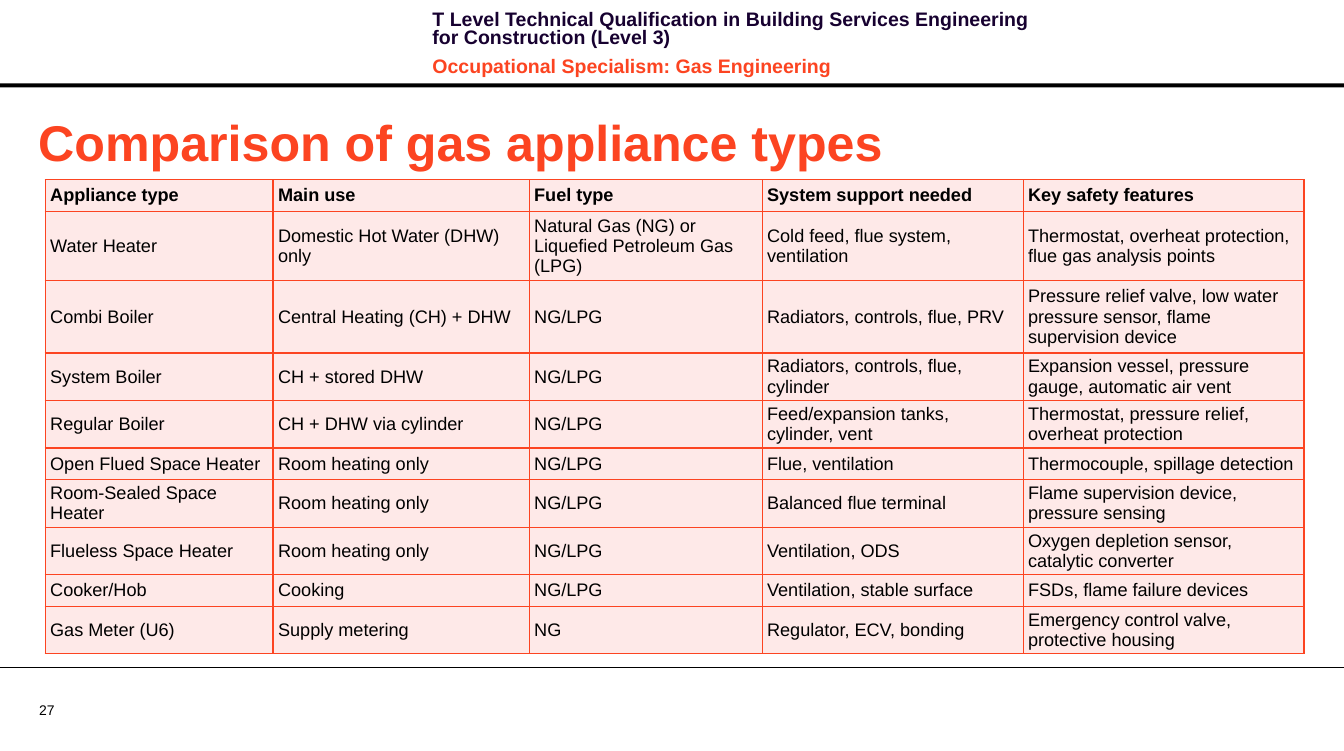
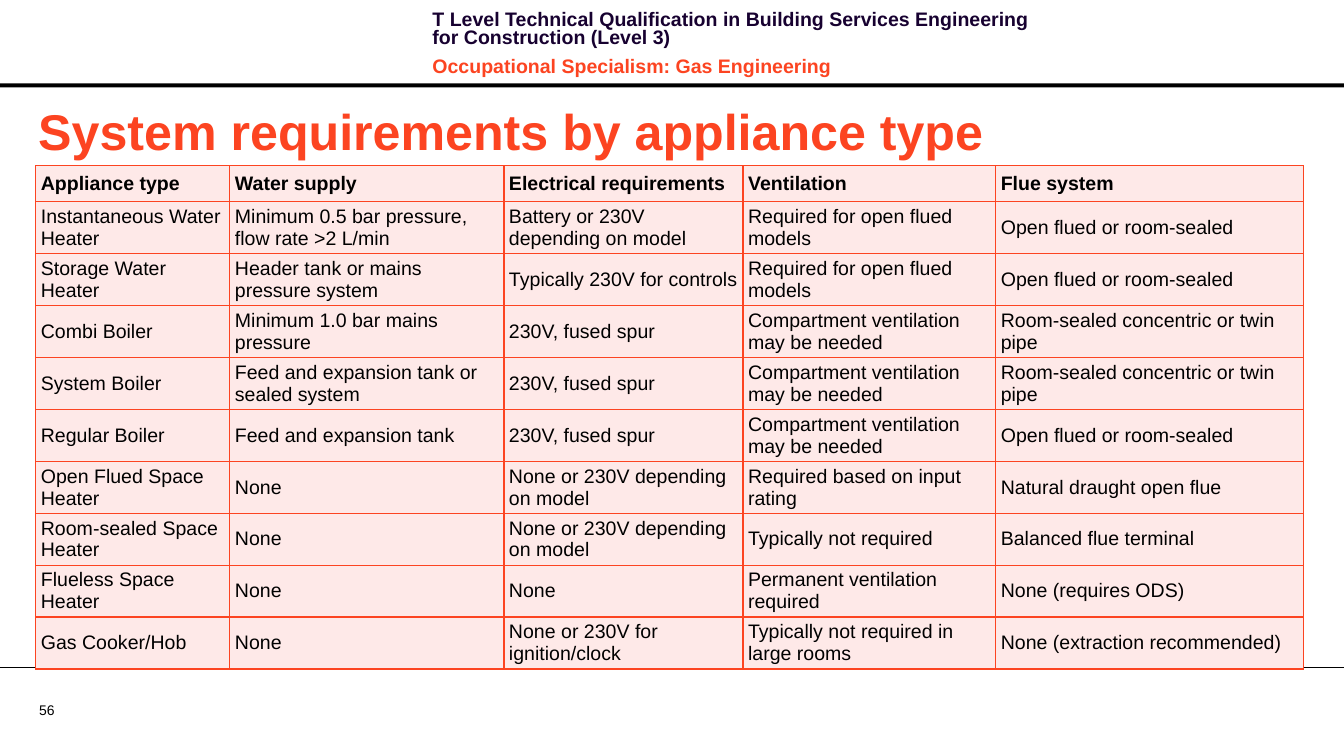
from lxml import etree
from pptx import Presentation
from pptx.dml.color import RGBColor
from pptx.enum import shapes, text
from pptx.oxml import ns
from pptx.util import Pt

WIDE, HIGH = 964, 538.6
HUES = {"red": "FC4421", "navy": "170130", "black": "000000", "pink": "FEE9E8"}

USES = [
    ("Appliance type", "Main use", "Fuel type", "System support needed", "Key safety features"),
    ("Water Heater", "Domestic Hot Water (DHW) only",
     "Natural Gas (NG) or Liquefied Petroleum Gas (LPG)",
     "Cold feed, flue system, ventilation",
     "Thermostat, overheat protection, flue gas analysis points"),
    ("Combi Boiler", "Central Heating (CH) + DHW", "NG/LPG", "Radiators, controls, flue, PRV",
     "Pressure relief valve, low water pressure sensor, flame supervision device"),
    ("System Boiler", "CH + stored DHW", "NG/LPG", "Radiators, controls, flue, cylinder",
     "Expansion vessel, pressure gauge, automatic air vent"),
    ("Regular Boiler", "CH + DHW via cylinder", "NG/LPG", "Feed/expansion tanks, cylinder, vent",
     "Thermostat, pressure relief, overheat protection"),
    ("Open Flued Space Heater", "Room heating only", "NG/LPG", "Flue, ventilation",
     "Thermocouple, spillage detection"),
    ("Room-Sealed Space Heater", "Room heating only", "NG/LPG", "Balanced flue terminal",
     "Flame supervision device, pressure sensing"),
    ("Flueless Space Heater", "Room heating only", "NG/LPG", "Ventilation, ODS",
     "Oxygen depletion sensor, catalytic converter"),
    ("Cooker/Hob", "Cooking", "NG/LPG", "Ventilation, stable surface",
     "FSDs, flame failure devices"),
    ("Gas Meter (U6)", "Supply metering", "NG", "Regulator, ECV, bonding",
     "Emergency control valve, protective housing"),
]
NEEDS = [
    ("Appliance type", "Water supply", "Electrical requirements", "Ventilation", "Flue system"),
    ("Instantaneous Water Heater", "Minimum 0.5 bar pressure, flow rate >2 L/min",
     "Battery or 230V depending on model", "Required for open flued models",
     "Open flued or room-sealed"),
    ("Storage Water Heater", "Header tank or mains pressure system",
     "Typically 230V for controls", "Required for open flued models",
     "Open flued or room-sealed"),
    ("Combi Boiler", "Minimum 1.0 bar mains pressure", "230V, fused spur",
     "Compartment ventilation may be needed", "Room-sealed concentric or twin pipe"),
    ("System Boiler", "Feed and expansion tank or sealed system", "230V, fused spur",
     "Compartment ventilation may be needed", "Room-sealed concentric or twin pipe"),
    ("Regular Boiler", "Feed and expansion tank", "230V, fused spur",
     "Compartment ventilation may be needed", "Open flued or room-sealed"),
    ("Open Flued Space Heater", "None", "None or 230V depending on model",
     "Required based on input rating", "Natural draught open flue"),
    ("Room-sealed Space Heater", "None", "None or 230V depending on model",
     "Typically not required", "Balanced flue terminal"),
    ("Flueless Space Heater", "None", "None", "Permanent ventilation required",
     "None (requires ODS)"),
    ("Gas Cooker/Hob", "None", "None or 230V for ignition/clock",
     "Typically not required in large rooms", "None (extraction recommended)"),
]


def put(thing, **vals):
    for name, val in vals.items():
        setattr(thing, name, val)


def hue(name):
    return RGBColor.from_string(HUES[name])


class Deck:
    """Holds the house style and the slide being built."""

    def __init__(self):
        self.show = Presentation()
        put(self.show, slide_width=Pt(WIDE), slide_height=Pt(HIGH))

    def page(self, title, top, num):
        self.slide = self.show.slides.add_slide(self.show.slide_layouts[5])
        self.band(0, 59.8, WIDE, 2.9)
        self.rule(478.8)
        self.label([(str(num), "black")], (28.1, 503.3, 46.1, 12.2), 10,
                   margin_left=0, margin_right=0, margin_top=0, margin_bottom=0,
                   vertical_anchor=text.MSO_ANCHOR.MIDDLE)
        self.label([("T Level Technical Qualification in Building Services Engineering "
                     "for Construction (Level 3)", "navy"),
                    ("Occupational Specialism: Gas Engineering", "red")],
                   (303.1, 5, 458.6, 46.1), 14, bold=True, pitch=13.1, gap=8)
        self.title(title, top)

    def style(self, para, words, size, tint, bold=False):
        para.text = words
        para.alignment = text.PP_ALIGN.LEFT
        put(para.font, name="Arial", size=Pt(size), bold=bold)
        para.font.color.rgb = hue(tint)

    def title(self, words, top):
        head = self.slide.shapes.title
        put(head, left=Pt(20.2), top=Pt(top), width=Pt(915.8), height=Pt(51.1))
        put(head.text_frame, word_wrap=True, auto_size=text.MSO_AUTO_SIZE.NONE,
            vertical_anchor=text.MSO_ANCHOR.MIDDLE)
        self.style(head.text_frame.paragraphs[0], words, 36, "red", True)

    def label(self, lines, box, size, bold=False, pitch=None, gap=0, **frame):
        body = self.slide.shapes.add_textbox(*map(Pt, box)).text_frame
        put(body, word_wrap=True, **frame)
        for i, (words, tint) in enumerate(lines):
            para = body.add_paragraph() if i else body.paragraphs[0]
            self.style(para, words, size, tint, bold)
            if pitch:
                para.line_spacing = Pt(pitch)
            if i:
                para.space_before = Pt(gap)

    def band(self, *box):
        bar = self.slide.shapes.add_shape(shapes.MSO_SHAPE.RECTANGLE, *map(Pt, box))
        bar.shadow.inherit = False
        bar.fill.solid()
        bar.fill.fore_color.rgb = hue("black")
        bar.line.fill.background()

    def rule(self, y):
        line = self.slide.shapes.add_connector(
            shapes.MSO_CONNECTOR.STRAIGHT, 0, Pt(y), Pt(WIDE), Pt(y))
        line.line.width = Pt(0.75)
        line.line.color.rgb = hue("black")
        etree.SubElement(line._element.spPr, ns.qn("a:effectLst"))

    def table(self, data, left, top, cols, rows, size, pad):
        """Draw a table; rows grow to fit their text when it is drawn."""
        grid = self.slide.shapes.add_table(
            len(rows), len(cols), *map(Pt, (left, top, sum(cols), sum(rows)))).table
        put(grid, first_row=False, horz_banding=False)
        for col, width in zip(grid.columns, cols):
            col.width = Pt(width)
        for r, (row, height) in enumerate(zip(grid.rows, rows)):
            row.height = Pt(height)
            for cell, words in zip(row.cells, data[r]):
                put(cell, margin_left=Pt(3.6), margin_right=Pt(3.6), margin_top=Pt(pad),
                    margin_bottom=Pt(pad), vertical_anchor=text.MSO_ANCHOR.MIDDLE)
                cell.fill.solid()
                cell.fill.fore_color.rgb = hue("pink")
                self.style(cell.text_frame.paragraphs[0], words, size, "black", r == 0)
                self.edge(cell)

    def edge(self, cell):
        props = cell._tc.get_or_add_tcPr()
        for i, side in enumerate(("lnL", "lnR", "lnT", "lnB")):
            line = etree.Element(ns.qn("a:" + side), w=str(Pt(1)))
            fill = etree.SubElement(line, ns.qn("a:solidFill"))
            etree.SubElement(fill, ns.qn("a:srgbClr"), val=HUES["red"])
            props.insert(i, line)


def main():
    deck = Deck()
    deck.page("Comparison of gas appliance types", 75.6, 27)
    low, mid = 22.7, 32.7
    deck.table(USES, 32.4, 128.9, (163.5, 183.7, 167.1, 187.2, 201.5),
               (low, 42.5, 52, mid, mid, low, mid, mid, low, mid), 13, 1.4)
    deck.page("System requirements by appliance type", 67.7, 56)
    low, mid = 26, 36.8
    deck.table(NEEDS, 25.7, 118.8, (139.2, 196.6, 171.5, 181.3, 221),
               (low, *[mid] * 5, *[low] * 3, mid), 14, 1.8)
    deck.show.save("out.pptx")


if __name__ == "__main__":
    main()
